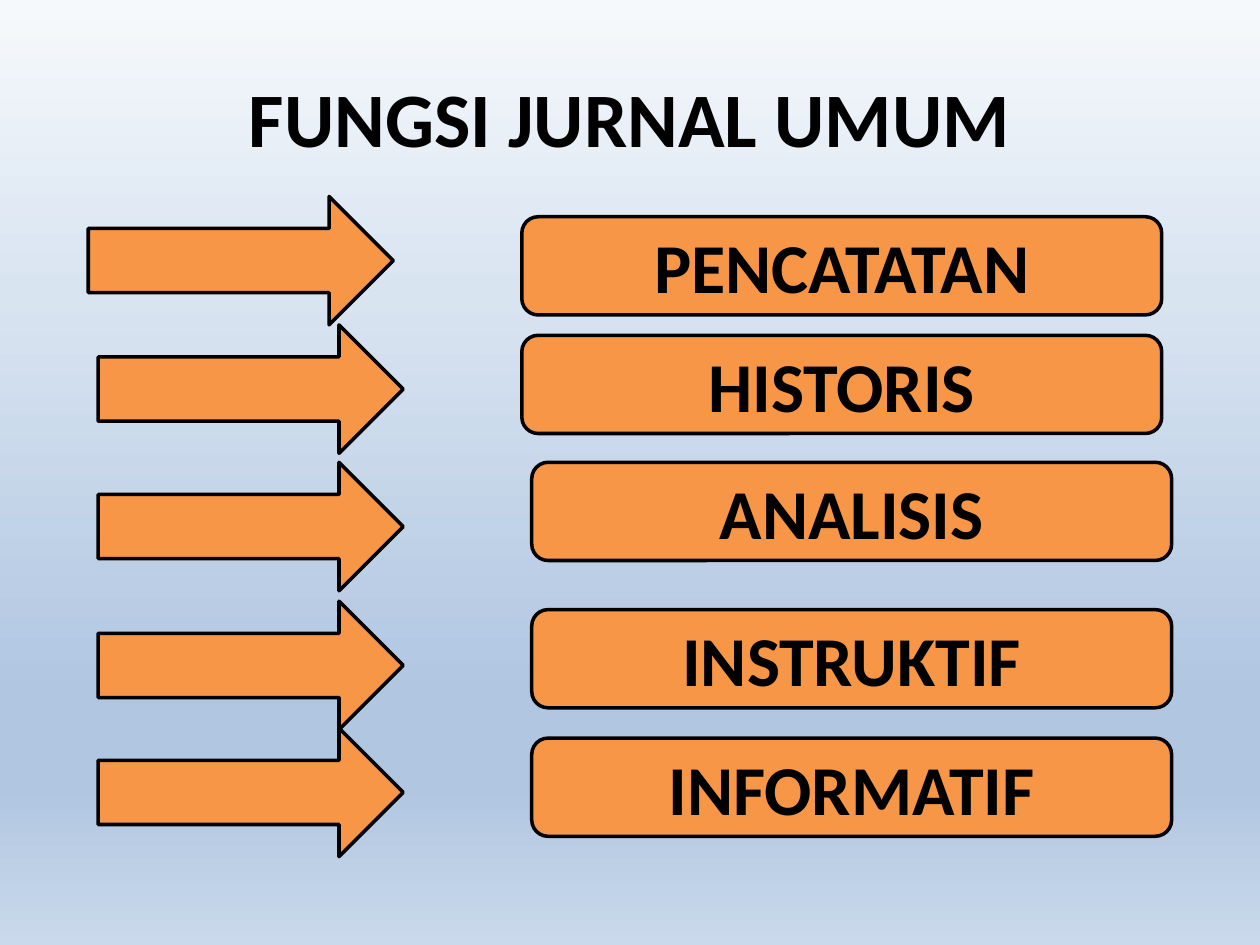
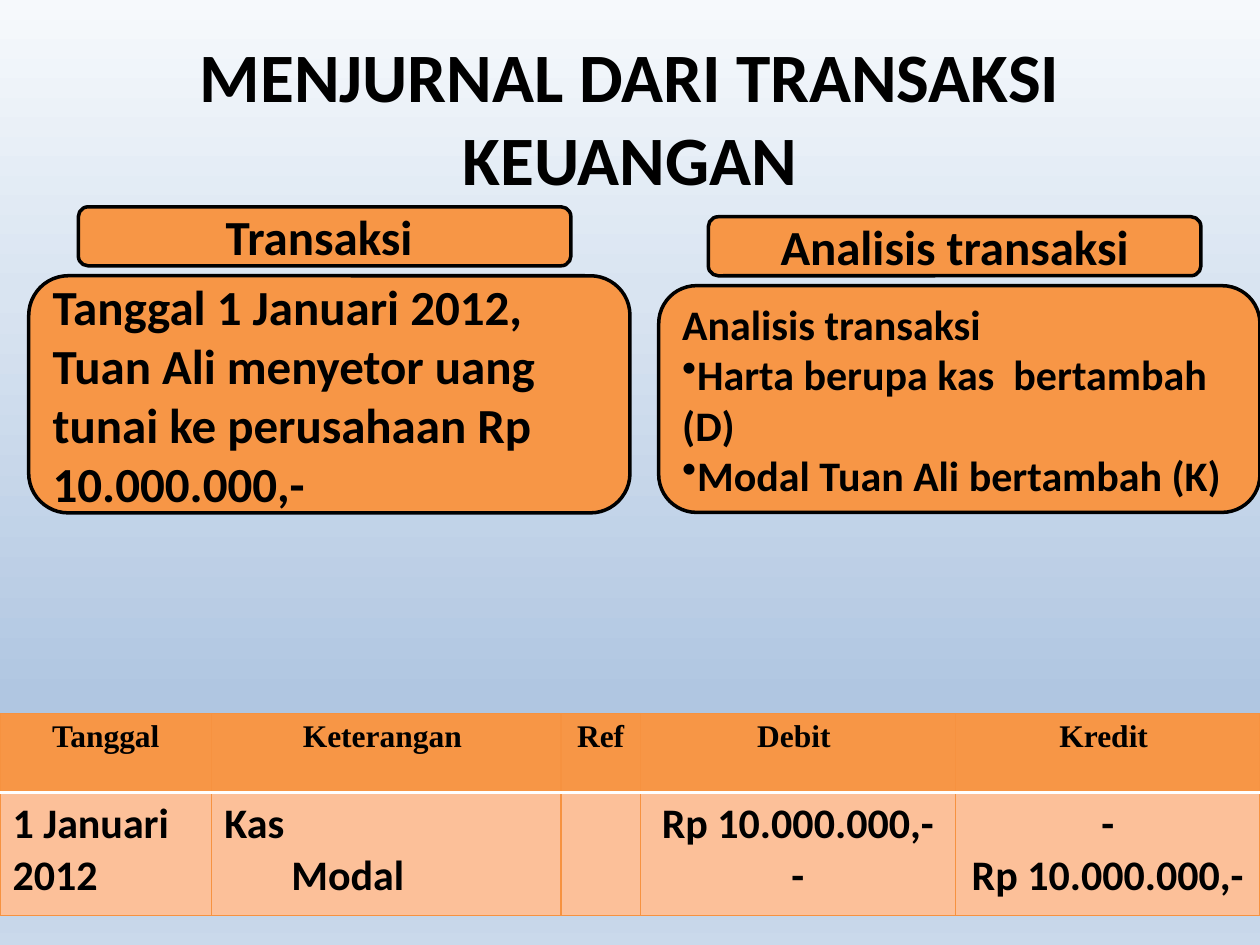
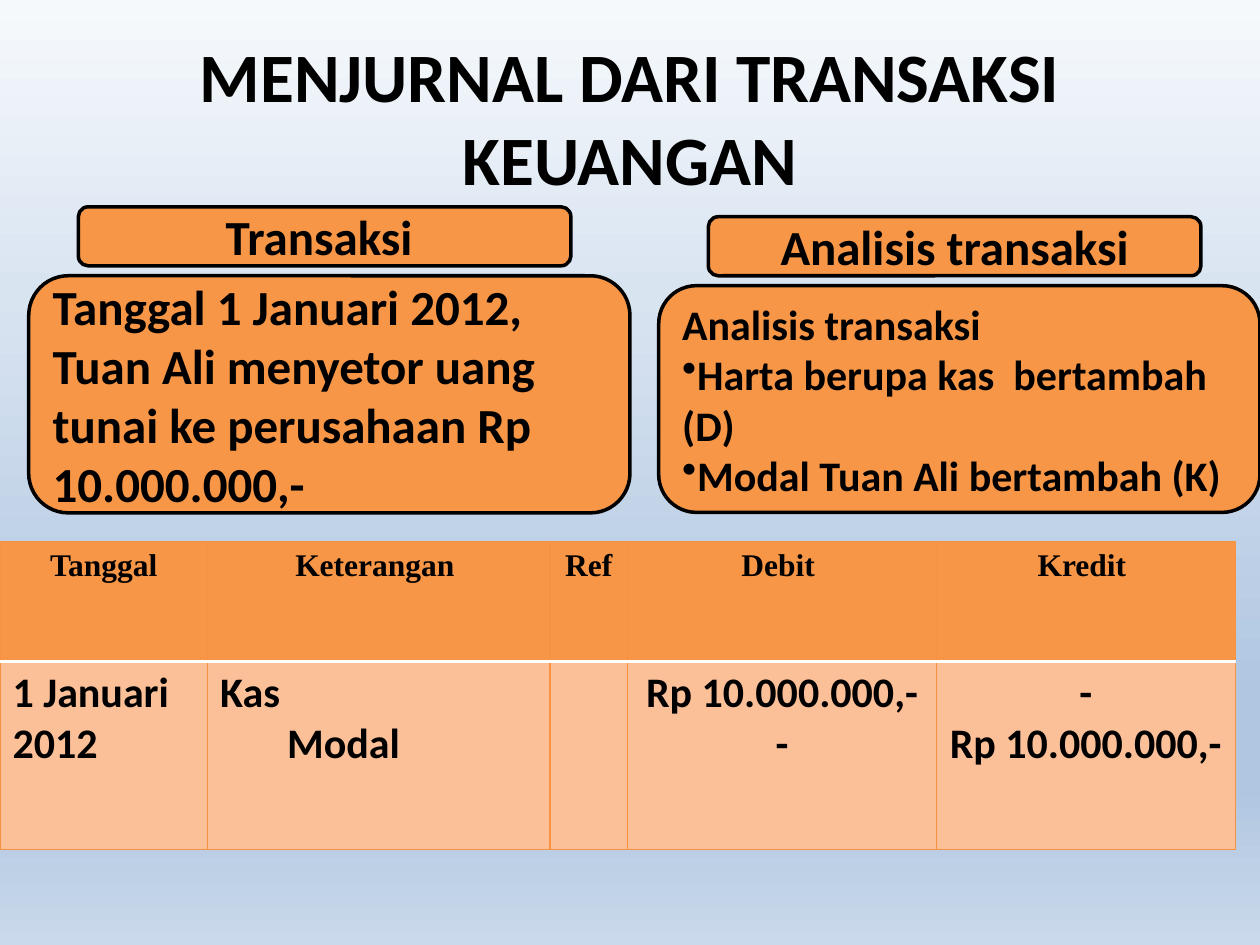
from lxml import etree
from pptx import Presentation
from pptx.dml.color import RGBColor
from pptx.enum.shapes import MSO_SHAPE
from pptx.enum.text import MSO_ANCHOR, PP_ALIGN
from pptx.oxml import parse_xml
from pptx.oxml.ns import nsdecls, qn
from pptx.util import Cm, Pt

ARROW, ROUNDED = MSO_SHAPE.RIGHT_ARROW, MSO_SHAPE.ROUNDED_RECTANGLE
LEFT, CENTER = PP_ALIGN.LEFT, PP_ALIGN.CENTER
MIDDLE = MSO_ANCHOR.MIDDLE

ORANGE, PEACH, RULE = "F79646", "FCC099", "F69240"
BLACK, WHITE = "000000", "FFFFFF"
SKY = [(0, "F6F9FC"), (31, "D9E4F1"), (74, "B0C6E1"), (83, "B0C6E1"), (100, "CAD9EB")]
BODY_FONT, HEAD_FONT = "Calibri", "Times New Roman"

# left and top of each arrow, then of the box beside it
FUNCTIONS = [
    ("PENCATATAN", (1.78, 3.96), (10.52, 4.37)),
    ("HISTORIS", (1.98, 6.55), (10.52, 6.76)),
    ("ANALISIS", (1.98, 9.32), (10.72, 9.32)),
    ("INSTRUKTIF", (1.98, 12.12), (10.72, 12.29)),
    ("INFORMATIF", (1.98, 14.68), (10.72, 14.88)),
]
HEADERS = ["Tanggal", "Keterangan ", "Ref", "Debit ", "Kredit "]
ENTRY = [
    (["1 Januari 2012"], LEFT),
    (["Kas", "Modal"], LEFT),
    ([], LEFT),
    (["Rp 10.000.000,-", "-"], CENTER),
    (["-", "Rp 10.000.000,-"], CENTER),
]
COLUMNS = [4.27, 7.04, 1.6, 6.35, 6.14]


def rgb(color):
    return RGBColor.from_string(color)


def write(tf, lines, size=24, font=BODY_FONT, color=BLACK, align=LEFT):
    for i, line in enumerate(lines):
        p = tf.paragraphs[0] if i == 0 else tf.add_paragraph()
        p.alignment = align
        r = p.add_run()
        r.text = line
        r.font.size, r.font.name, r.font.bold = Pt(size), font, True
        r.font.color.rgb = rgb(color)


def paint_background(master):
    fill = master.background.fill
    fill.gradient()
    fill.gradient_angle = 270
    stops = fill.gradient_stops[0]._gs.getparent()
    for gs in list(stops):
        stops.remove(gs)
    for position, color in SKY:
        gs = etree.SubElement(stops, qn("a:gs"), pos=str(position * 1000))
        etree.SubElement(gs, qn("a:srgbClr"), val=color)


def add_slide(prs, title, size):
    s = prs.slides.add_slide(prs.slide_layouts[6])
    tf = s.shapes.add_textbox(Cm(1.27), Cm(0.76), Cm(22.86), Cm(3.18)).text_frame
    tf.word_wrap = True
    tf.vertical_anchor = MIDDLE
    write(tf, [title], size=size, align=CENTER)
    return s


def add_block(s, kind, left, top, width, height, lines=(), **fmt):
    """Add an orange shape with a black outline."""
    sp = s.shapes.add_shape(kind, Cm(left), Cm(top), Cm(width), Cm(height))
    sp.shadow.inherit = False
    sp.fill.solid()
    sp.fill.fore_color.rgb = rgb(ORANGE)
    sp.line.color.rgb = rgb(BLACK)
    sp.line.width = Pt(2)
    tf = sp.text_frame
    tf.word_wrap = True
    tf.vertical_anchor = MIDDLE
    write(tf, lines, **fmt)
    return sp


def add_bullet(p):
    etree.SubElement(p._p.get_or_add_pPr(), qn("a:buChar"), char="•")


def add_panel(s, left, top, height, heading, lines, size):
    """Add a heading plate and the text box under it."""
    body = add_block(s, ROUNDED, left, top + 1.39, 12.12, height, lines, size=size)
    add_block(s, ROUNDED, left + 1, top, 9.93, 1.19, [heading], size=28, align=CENTER)
    return body.text_frame


def style_cell(cell, fill, top, bottom):
    """Fill a cell and rule its four sides; top and bottom are (colour, points)."""
    cell.fill.solid()
    cell.fill.fore_color.rgb = rgb(fill)
    tcPr = cell._tc.get_or_add_tcPr()
    side = (RULE, 0.75)
    borders = [("lnL", side), ("lnR", side), ("lnT", top), ("lnB", bottom)]
    for i, (tag, (color, width)) in enumerate(borders):
        tcPr.insert(i, parse_xml(
            f'<a:{tag} {nsdecls("a")} w="{Pt(width)}"><a:solidFill>'
            f'<a:srgbClr val="{color}"/></a:solidFill></a:{tag}>'))


def add_journal(s, top, width, row_heights):
    table = s.shapes.add_table(2, len(COLUMNS), 0, Cm(top), Cm(width),
                               Cm(sum(row_heights))).table
    table.first_row = table.horz_banding = False
    for column, share in zip(table.columns, COLUMNS):
        column.width = Cm(share * width / sum(COLUMNS))
    for row, height in zip(table.rows, row_heights):
        row.height = Cm(height)
    thin, divider = (RULE, 0.75), (WHITE, 2)
    for i, (header, (lines, align)) in enumerate(zip(HEADERS, ENTRY)):
        head, entry = table.cell(0, i), table.cell(1, i)
        write(head.text_frame, [header], size=18, font=HEAD_FONT, align=CENTER)
        write(entry.text_frame, lines, align=align)
        style_cell(head, ORANGE, thin, divider)
        style_cell(entry, PEACH, divider, thin)
    credit_account = table.cell(1, 1).text_frame.paragraphs[1]
    credit_account._p.get_or_add_pPr().set("marL", str(Cm(1.35)))


def functions_slide(prs):
    s = add_slide(prs, "FUNGSI JURNAL UMUM", 44)
    for _, arrow, _ in FUNCTIONS:
        add_block(s, ARROW, *arrow, 6.15, 2.59)
    for name, _, box in FUNCTIONS:
        add_block(s, ROUNDED, *box, 12.9, 1.98, [name], size=40, align=CENTER)


def transaction_slide(prs, **journal):
    s = add_slide(prs, "MENJURNAL DARI TRANSAKSI KEUANGAN", 39.6)
    add_panel(s, 0.58, 4.17, 4.78, "Transaksi ",
              ["Tanggal 1 Januari 2012, Tuan Ali menyetor uang tunai "
               "ke perusahaan Rp 10.000.000,-"], 28)
    tf = add_panel(s, 13.28, 4.37, 4.57, "Analisis transaksi",
                   ["Analisis transaksi", "Harta berupa kas  bertambah  (D)",
                    "Modal Tuan Ali bertambah (K)"], 24)
    for p in tf.paragraphs[1:]:
        add_bullet(p)
    add_journal(s, **journal)


def main():
    prs = Presentation()
    prs.slide_width, prs.slide_height = Cm(25.4), Cm(19.05)
    paint_background(prs.slide_master)
    functions_slide(prs)
    transaction_slide(prs, top=14.38, width=25.4, row_heights=(1.6, 2.48))
    transaction_slide(prs, top=10.92, width=24.9, row_heights=(2.41, 3.79))
    prs.save("out.pptx")


if __name__ == "__main__":
    main()
